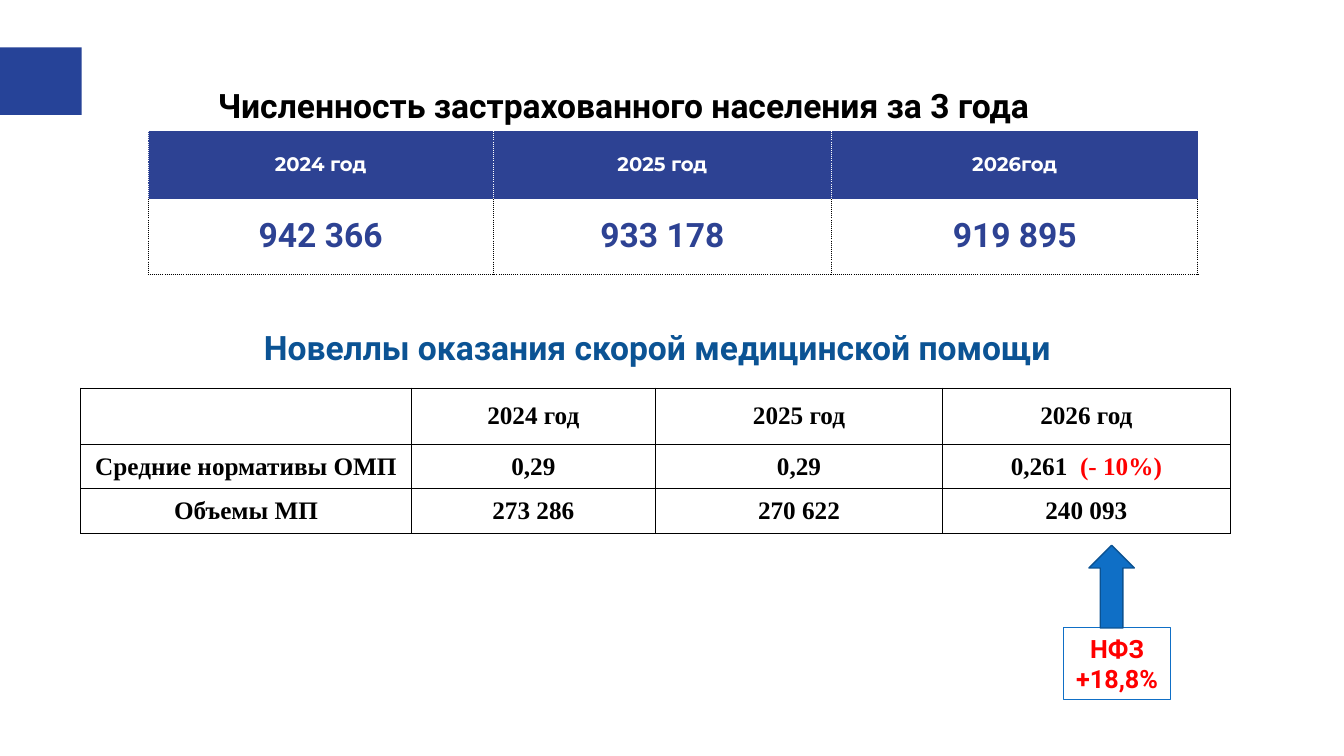
from lxml import etree
from pptx import Presentation
from pptx import util as u
from pptx.dml.color import RGBColor
from pptx.enum import shapes, text
from pptx.oxml.ns import qn

WIDTH, HEIGHT = 13.33, 7.5
NAVY, BLUE, DARK_BLUE, TITLE_BLUE = "2D4293", "0F6FC6", "0B5292", "0B5394"
BLACK, WHITE, RED = "000000", "FFFFFF", "FF0000"

# Text formats: font, size, colour
HEADER = ("Montserrat", 14, WHITE)
FIGURE = ("Roboto", 24, NAVY)
BODY = ("Times New Roman", 18, BLACK)
BODY_RED = ("Times New Roman", 18, RED)
CALLOUT = ("Roboto", 18, RED)

POPULATION = {
    "box": (1.47, 1.3),
    "columns": (3.42, 3.36, 3.63),
    "rows": (0.67, 0.75),
    "cells": [
        [[("2024 год", HEADER)], [("2025 год", HEADER)], [("2026год", HEADER)]],
        [[("942 366", FIGURE)], [("933 178", FIGURE)], [("919 895", FIGURE)]],
    ],
}
AMBULANCE = {
    "box": (0.8, 3.85),
    "columns": (3.28, 2.42, 2.85, 2.85),
    "rows": (0.56, 0.44, 0.44),
    "cells": [
        [[], [("2024 год", BODY)], [("2025 год", BODY)], [("2026 год", BODY)]],
        [[("Средние нормативы ОМП", BODY)], [("0,29", BODY)], [("0,29", BODY)],
         [("0,261 ", BODY), (" (- 10%)", BODY_RED)]],
        [[("Объемы МП", BODY)], [("273 286", BODY)], [("270 622", BODY)],
         [("240 093", BODY)]],
    ],
}
# Headings and callout: box, lines, format, outline, wrapping
TEXTS = [
    ((1.82, 0.79, 8.73, 0.5), ["Численность застрахованного населения за 3 года"],
     ("Roboto", 24, BLACK), None, False),
    ((1.91, 3.19, 9.22, 0.5), ["Новеллы оказания скорой медицинской помощи"],
     ("Roboto", 24, TITLE_BLUE), WHITE, True),
    ((10.55, 6.23, 1.06, 0.71), ["НФЗ", "+18,8%"], CALLOUT, BLUE, False),
]


def rgb(colour):
    return RGBColor.from_string(colour)


def inches(values):
    return [u.Inches(value) for value in values]


def write(paragraph, runs):
    paragraph.alignment = text.PP_ALIGN.CENTER
    for content, (name, size, colour) in runs:
        font = paragraph.add_run().font
        paragraph.runs[-1].text = content
        for key, value in {"name": name, "size": u.Pt(size), "bold": True}.items():
            setattr(font, key, value)
        font.color.rgb = rgb(colour)


def set_border(cell, side, colour, points, dash):
    """Draw one cell edge; side is L, R, T or B, and no colour hides it."""
    line = etree.SubElement(cell._tc.get_or_add_tcPr(), qn(f"a:ln{side}"),
                            w=str(u.Pt(points)))
    if colour is None:
        etree.SubElement(line, qn("a:noFill"))
        return
    fill = etree.SubElement(line, qn("a:solidFill"))
    etree.SubElement(fill, qn("a:srgbClr"), val=colour)
    etree.SubElement(line, qn("a:prstDash"), val=dash)


def population_style(row, column, last_column):
    """Return the fill and edges of a cell with dotted separators."""
    edge = WHITE if row == 0 else BLACK
    right = None if row == 0 and column == last_column else edge
    borders = {"L": edge, "R": right, "T": None, "B": BLACK if row else None}
    return (None if row else NAVY), borders, 0.75, "sysDot"


def ambulance_style(row, column, last_column):
    """Return the fill and edges of a cell in a plain black grid."""
    return None, dict.fromkeys("LRTB", BLACK), 0.75, "solid"


def add_grid(slide, content, style):
    columns, rows = content["columns"], content["rows"]
    box = inches((*content["box"], sum(columns), sum(rows)))
    table = slide.shapes.add_table(len(rows), len(columns), *box).table
    table.first_row = table.horz_banding = False
    for column, width in zip(table.columns, inches(columns)):
        column.width = width
    for row, height in zip(table.rows, inches(rows)):
        row.height = height
    for r, line in enumerate(content["cells"]):
        for c, runs in enumerate(line):
            cell = table.cell(r, c)
            for side in ("left", "right", "top", "bottom"):
                setattr(cell, f"margin_{side}", 0)
            cell.vertical_anchor = text.MSO_ANCHOR.MIDDLE
            fill, borders, points, dash = style(r, c, len(columns) - 1)
            for side, colour in borders.items():
                set_border(cell, side, colour, points, dash)
            paint(cell.fill, fill)
            write(cell.text_frame.paragraphs[0], runs)


def paint(fill, colour):
    if colour is None:
        fill.background()
    else:
        fill.solid()
        fill.fore_color.rgb = rgb(colour)


def add_figure(slide, kind, box, fill=None, outline=None, points=0.75):
    shape = slide.shapes.add_shape(kind, *inches(box))
    shape.shadow.inherit = False
    paint(shape.fill, fill)
    paint(shape.line.fill, outline)
    if outline:
        shape.line.width = u.Pt(points)
    return shape


def add_text(slide, box, lines, style, outline, wrap):
    if outline:
        shape = add_figure(slide, shapes.MSO_SHAPE.RECTANGLE, box, outline=outline)
    else:
        shape = slide.shapes.add_textbox(*inches(box))
    frame = shape.text_frame
    frame.word_wrap = wrap
    frame.auto_size = text.MSO_AUTO_SIZE.SHAPE_TO_FIT_TEXT
    for index, line in enumerate(lines):
        paragraph = frame.add_paragraph() if index else frame.paragraphs[0]
        write(paragraph, [(line, style)])


def main():
    presentation = Presentation()
    presentation.slide_width, presentation.slide_height = inches((WIDTH, HEIGHT))
    slide = presentation.slides.add_slide(presentation.slide_layouts[6])
    add_figure(slide, shapes.MSO_SHAPE.RECTANGLE, (0, 0.47, 0.81, 0.67), "264398")
    add_grid(slide, POPULATION, population_style)
    add_grid(slide, AMBULANCE, ambulance_style)
    for item in TEXTS:
        add_text(slide, *item)
    add_figure(slide, shapes.MSO_SHAPE.UP_ARROW, (10.8, 5.41, 0.45, 0.82),
               BLUE, DARK_BLUE, 1)
    presentation.save("out.pptx")


if __name__ == "__main__":
    main()
